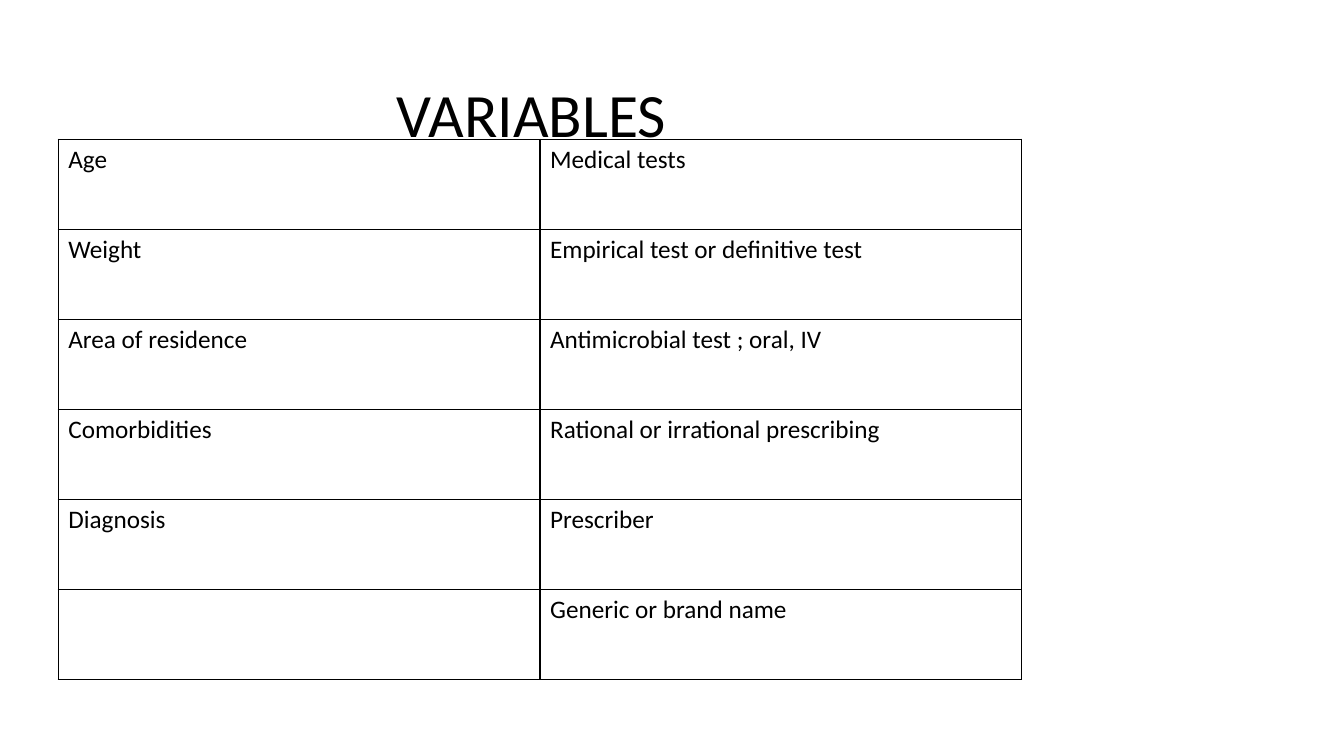
from lxml.etree import SubElement
from pptx import Presentation
from pptx.dml.color import RGBColor
from pptx.enum.text import MSO_ANCHOR as Anchor
from pptx.oxml.ns import qn
from pptx.util import Cm, Pt

VARIABLES = [
    ("Age", "Medical tests"),
    ("Weight", "Empirical test or definitive test"),
    ("Area of residence", "Antimicrobial test ; oral, IV"),
    ("Comorbidities", "Rational or irrational prescribing"),
    ("Diagnosis", "Prescriber"),
    ("", "Generic or brand name"),
]


def color(hex_string):
    return RGBColor.from_string(hex_string)


def set_attributes(target, values):
    for name, value in values.items():
        setattr(target, name, value)


class SlideBuilder:
    """Holds the text and line style and the slide being filled."""

    font_name = "Calibri"
    ink = "000000"
    paper = "FFFFFF"
    border_width = Pt(1)

    def __init__(self, slide):
        self.slide = slide

    def add_text(self, paragraph, text, size):
        run = paragraph.add_run()
        run.text = text
        set_attributes(run.font, {"name": self.font_name, "size": Pt(size), "bold": False})
        run.font.color.rgb = color(self.ink)

    def title(self, text, left, top, width, height, indent):
        """Add a heading whose text starts at the given indent inside its box."""
        box = self.slide.shapes.add_textbox(Cm(left), Cm(top), Cm(width), Cm(height))
        frame = box.text_frame
        set_attributes(frame, {
            "word_wrap": True,
            "vertical_anchor": Anchor.MIDDLE,
            "margin_left": Cm(indent),
        })
        paragraph = frame.paragraphs[0]
        paragraph.line_spacing = 0.9
        self.add_text(paragraph, text, 44)

    def border(self, cell):
        """Draw a line on all four sides; call before the cell is filled."""
        properties = cell._tc.get_or_add_tcPr()
        for side in ("lnL", "lnR", "lnT", "lnB"):
            line = SubElement(properties, qn(f"a:{side}"), w=str(self.border_width))
            fill = SubElement(line, qn("a:solidFill"))
            SubElement(fill, qn("a:srgbClr"), val=self.ink)

    def table(self, rows, left, top, column_width, row_height):
        row_count, column_count = len(rows), len(rows[0])
        frame = self.slide.shapes.add_table(
            row_count, column_count, Cm(left), Cm(top),
            Cm(column_width * column_count), Cm(row_height * row_count))
        table = frame.table
        set_attributes(table, {"first_row": False, "horz_banding": False})
        for row, texts in zip(table.rows, rows):
            row.height = Cm(row_height)
            for cell, text in zip(row.cells, texts):
                self.border(cell)
                cell.fill.solid()
                cell.fill.fore_color.rgb = color(self.paper)
                if text:
                    self.add_text(cell.text_frame.paragraphs[0], text, 18)


def main():
    presentation = Presentation()
    set_attributes(presentation, {"slide_width": Cm(33.87), "slide_height": Cm(19.05)})
    builder = SlideBuilder(presentation.slides.add_slide(presentation.slide_layouts[6]))
    builder.title("VARIABLES", left=2, top=1.7, width=23.75, height=2.54, indent=8)
    builder.table(VARIABLES, left=1.47, top=3.51, column_width=12.14, row_height=2.27)
    presentation.save("out.pptx")


if __name__ == "__main__":
    main()
